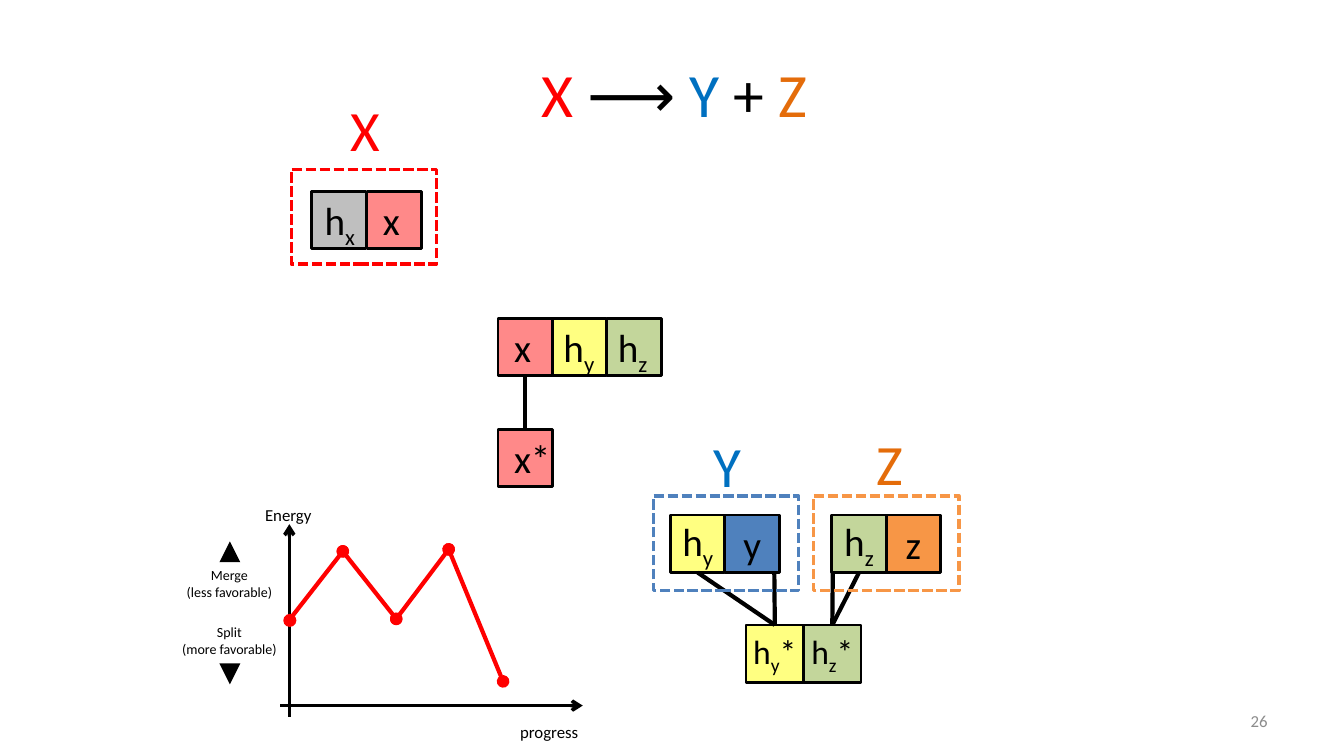
from pptx import Presentation
from pptx.dml.color import RGBColor
from pptx.enum.dml import MSO_LINE
from pptx.enum.shapes import MSO_CONNECTOR, MSO_SHAPE
from pptx.enum.text import MSO_ANCHOR, MSO_AUTO_SIZE, PP_ALIGN
from pptx.oxml.ns import qn
from pptx.util import Inches, Pt
from lxml import etree

RECT, OVAL = MSO_SHAPE.RECTANGLE, MSO_SHAPE.OVAL
STRAIGHT, DASH = MSO_CONNECTOR.STRAIGHT, MSO_LINE.SQUARE_DOT
LEFT, CENTER, RIGHT = PP_ALIGN.LEFT, PP_ALIGN.CENTER, PP_ALIGN.RIGHT
TOP, MIDDLE = MSO_ANCHOR.TOP, MSO_ANCHOR.MIDDLE
FIT = MSO_AUTO_SIZE.SHAPE_TO_FIT_TEXT
BOTTOM_SITE, TOP_SITE = 2, 0

COLORS = {
    "black": "000000", "red": "FF0000", "blue": "0070C0", "orange": "E46C0A",
    "pink": "FF8989", "yellow": "FFFF81", "green": "C3D69B", "gray": "BFBFBF",
    "steel": "4F81BD", "amber": "F79646", "number": "8C8C8C",
}
CELL_W, CELL_H, STAR_W = 0.54, 0.57, 0.57
FRAME_W, FRAME_H = 1.44, 0.94

TITLE = [("X", "red"), (" ⟶ ", "black"), ("Y", "blue"), (" + ", "black"), ("Z", "orange")]
HX, HY, HZ = ([("h", "black"), (s, "black", -25000)] for s in "xyz")
STAR = [("*", "black")]
CENTERED_CELLS = {
    "z": (8.79, 5.11, CELL_W, "amber", "z", 28),
    "hz": (8.25, 5.11, CELL_W, "green", HZ, 28),
    "y": (7.19, 5.11, CELL_W, "steel", "y", 28),
    "hy": (6.65, 5.11, CELL_W, "yellow", HY, 28),
    "hz*": (7.97, 6.2, STAR_W, "green", HZ + STAR, 24),
    "hy*": (7.4, 6.2, STAR_W, "yellow", HY + STAR, 24),
}
LABELED_CELLS = {
    "x*": (4.94, 4.26, "pink", "x*", 5.0, 0.59),
    "x": (4.94, 3.16, "pink", "x", 5.0, 0.37),
    "merged hz": (6.02, 3.16, "green", HZ, 6.03, 0.52),
    "merged hy": (5.48, 3.16, "yellow", HY, 5.49, 0.52),
    "hx": (3.09, 1.9, "gray", HX, 3.12, 0.52),
    "first x": (3.64, 1.9, "pink", "x", 3.7, 0.37),
}
BONDS = [("x", "x*"), ("hy", "hy*"), ("hz", "hz*")]
DROPS = [(7.68, "hy*"), (8.26, "hz*")]
FRAMES = [
    ("X", 2.89, 1.68, "red", "red", 3.37, 1.01),
    ("Z", 8.07, 4.92, "amber", "orange", 8.58, 4.32),
    ("Y", 6.48, 4.92, "steel", "blue", 6.96, 4.34),
]
AXES = [((2.87, 5.2), (2.87, 7.11)), ((5.78, 7), (2.78, 7))]
AXIS_NAMES = [("progress", 5.06, 7.11, 0.8), ("Energy", 2.53, 4.96, 0.68)]
DIRECTIONS = [
    (["Merge", "(less favorable)"], 5.57, 5.57, 5.37),
    (["Split", "(more favorable)"], 6.14, 6.59, 6.79),
]
ENERGY = [(2.87, 6.15), (3.4, 5.47), (3.93, 6.14), (4.45, 5.45), (4.99, 6.76)]

prs = Presentation()
prs.slide_width, prs.slide_height = Inches(13.33), Inches(7.5)
shapes = prs.slides.add_slide(prs.slide_layouts[6]).shapes


def rgb(name):
    return RGBColor.from_string(COLORS[name])


def write(sp, paragraphs, size, color="black", align=LEFT, anchor=TOP,
          wrap=True, inset=None, spacing=None, fit=None):
    tf = sp.text_frame
    tf.word_wrap, tf.vertical_anchor = wrap, anchor
    if fit:
        tf.auto_size = fit
    if inset is not None:
        tf.margin_left = tf.margin_right = tf.margin_top = tf.margin_bottom = Inches(inset)
    for i, runs in enumerate(paragraphs):
        p = tf.add_paragraph() if i else tf.paragraphs[0]
        p.alignment = align
        if spacing:
            p.line_spacing = spacing
        for text, tint, *base in [(runs, color)] if isinstance(runs, str) else runs:
            r = p.add_run()
            r.text = text
            r.font.name, r.font.size = "Calibri", Pt(size)
            r.font.color.rgb = rgb(tint)
            if base:
                r.font._element.set("baseline", str(base[0]))


def add_text(x, y, w, h, paragraphs, size, **style):
    sp = shapes.add_textbox(Inches(x), Inches(y), Inches(w), Inches(h))
    write(sp, paragraphs, size, **style)


def add_box(kind, x, y, w, h, fill=None, line=None, width=2, dash=None):
    sp = shapes.add_shape(kind, Inches(x), Inches(y), Inches(w), Inches(h))
    sp.shadow.inherit = False
    if fill:
        sp.fill.solid()
        sp.fill.fore_color.rgb = rgb(fill)
    else:
        sp.fill.background()
    if line:
        sp.line.color.rgb = rgb(line)
        sp.line.width = Pt(width)
        if dash:
            sp.line.dash_style = dash
    else:
        sp.line.fill.background()
    return sp


def add_line(start, end, width, color="black", head=None, tail=None):
    c = shapes.add_connector(STRAIGHT, *(Inches(v) for v in (*start, *end)))
    c.line.color.rgb = rgb(color)
    c.line.width = Pt(width)
    ln = c.line._get_or_add_ln()
    for tag, kind in (("a:headEnd", head), ("a:tailEnd", tail)):
        if kind:
            etree.SubElement(ln, qn(tag), type=kind)
    etree.SubElement(c._element.spPr, qn("a:effectLst"))
    return c


for start, end in AXES:
    add_line(start, end, 2.5, head="arrow")
for name, x, y, w in AXIS_NAMES:
    add_text(x, y, w, 0.3, [name], 12, wrap=False, fit=FIT)
for words, y, start, end in DIRECTIONS:
    add_line((2.28, start), (2.28, end), 5, tail="triangle")
    add_text(1.68, y, 1.19, 0.44, words, 10, align=CENTER, fit=FIT)

cells = {}
for name, (x, y, w, fill, label, size) in CENTERED_CELLS.items():
    cells[name] = add_box(RECT, x, y, w, CELL_H, fill, "black")
    write(cells[name], [label], size, align=CENTER, anchor=MIDDLE, inset=0)
for name, (x, y, fill, label, text_x, text_w) in LABELED_CELLS.items():
    cells[name] = add_box(RECT, x, y, CELL_W, CELL_H, fill, "black")
    add_text(text_x, y, text_w, CELL_H, [label], 28, wrap=False, fit=FIT)

for upper, lower in BONDS:
    c = add_line((0, 0), (1, 1), 3)
    c.begin_connect(cells[upper], BOTTOM_SITE)
    c.end_connect(cells[lower], TOP_SITE)
for x, lower in DROPS:
    c = add_line((x, 5.68), (x, 6.2), 3)
    c.end_connect(cells[lower], TOP_SITE)

add_text(2.19, 0.3, 9, 1.25, [TITLE], 44, align=CENTER, anchor=MIDDLE)

for i, (start, end) in enumerate(zip(ENERGY, ENERGY[1:])):
    add_line(end, start, 3, "red", head="oval", tail="oval" if i else None)
add_box(OVAL, 2.81, 6.09, 0.13, 0.13, "red")

for name, x, y, line, color, text_x, text_y in FRAMES:
    add_text(text_x, text_y, 0.5, 0.67, [name], 40.7, color=color,
             align=CENTER, anchor=MIDDLE, spacing=0.8)
    add_box(RECT, x, y, FRAME_W, FRAME_H, line=line, width=2.5, dash=DASH)

add_text(9.56, 6.95, 3.11, 0.4, ["26"], 12, color="number", align=RIGHT, anchor=MIDDLE)

prs.save("out.pptx")
